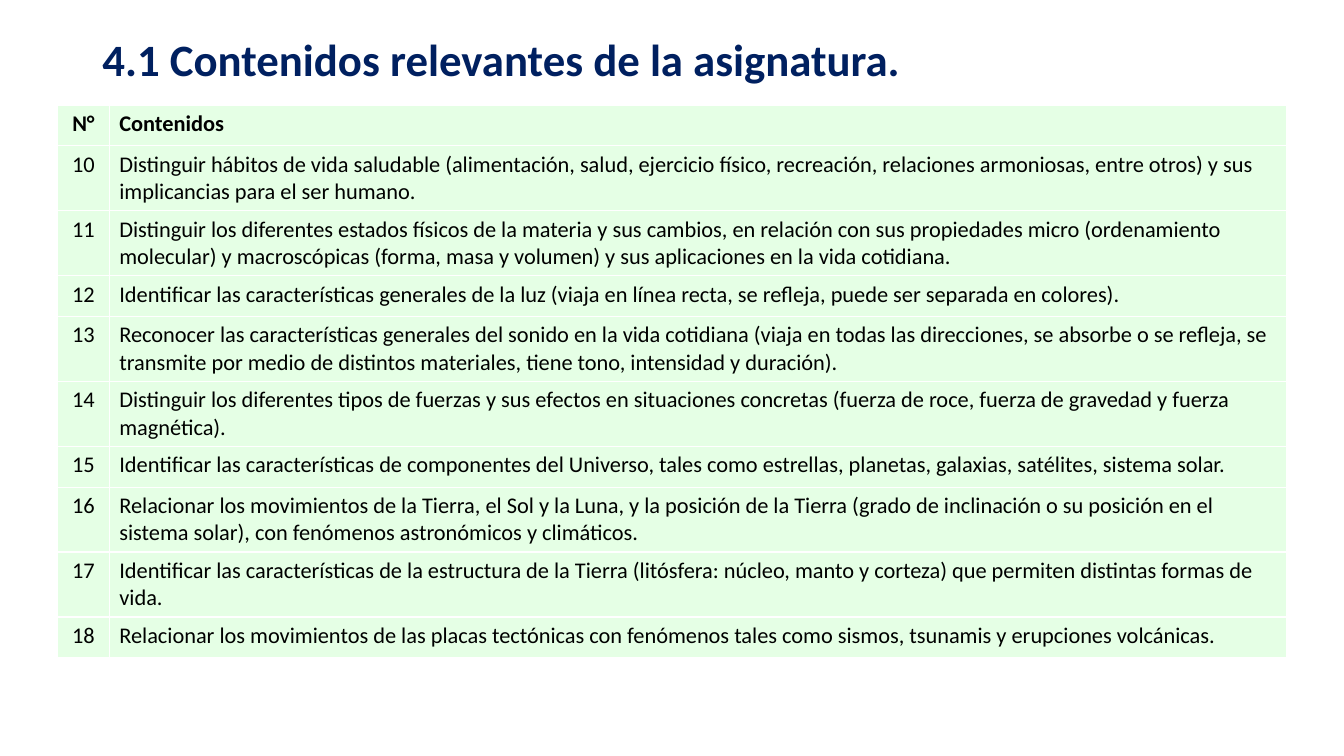
"""Build the slide listing contents 10 to 18 of the subject."""
from pptx import Presentation
from pptx.dml.color import RGBColor
from pptx.enum.text import MSO_ANCHOR, PP_ALIGN
from pptx.util import Pt

LEFT, CENTER, MIDDLE = PP_ALIGN.LEFT, PP_ALIGN.CENTER, MSO_ANCHOR.MIDDLE
NAVY = RGBColor(0x00, 0x20, 0x60)
BLACK = RGBColor(0x00, 0x00, 0x00)
PALE_GREEN = RGBColor(0xE5, 0xFF, 0xE5)
FONT = "Calibri"

HEADING = "4.1 Contenidos relevantes de la asignatura."
HEADER = ("N°", "Contenidos")
FIRST_NUMBER = 10
CONTENTS = [
    "Distinguir hábitos de vida saludable (alimentación, salud, ejercicio físico, recreación, relaciones armoniosas, entre otros) y sus implicancias para el ser humano.",
    "Distinguir los diferentes estados físicos de la materia y sus cambios, en relación con sus propiedades micro (ordenamiento molecular) y macroscópicas (forma, masa y volumen) y sus aplicaciones en la vida cotidiana.",
    "Identificar las características generales de la luz (viaja en línea recta, se refleja, puede ser separada en colores).",
    "Reconocer las características generales del sonido en la vida cotidiana (viaja en todas las direcciones, se absorbe o se refleja, se transmite por medio de distintos materiales, tiene tono, intensidad y duración).",
    "Distinguir los diferentes tipos de fuerzas y sus efectos en situaciones concretas (fuerza de roce, fuerza de gravedad y fuerza magnética).",
    "Identificar las características de componentes del Universo, tales como estrellas, planetas, galaxias, satélites, sistema solar.",
    "Relacionar los movimientos de la Tierra, el Sol y la Luna, y la posición de la Tierra (grado de inclinación o su posición en el sistema solar), con fenómenos astronómicos y climáticos.",
    "Identificar las características de la estructura de la Tierra (litósfera: núcleo, manto y corteza) que permiten distintas formas de vida.",
    "Relacionar los movimientos de las placas tectónicas con fenómenos tales como sismos, tsunamis y erupciones volcánicas.",
]
COLUMN_WIDTHS = (36.9, 840.9)
COLUMN_ALIGNMENTS = (CENTER, LEFT)
ROW_HEIGHT = 29.2


def style(paragraph, size, color, bold):
    paragraph.font.name = FONT
    paragraph.font.size = Pt(size)
    paragraph.font.color.rgb = color
    paragraph.font.bold = bold


def add_heading(slide):
    heading = slide.shapes.title
    heading.left, heading.top, heading.width, heading.height = Pt(66), Pt(18.6), Pt(828), Pt(52)
    heading.text_frame.text = HEADING
    heading.text_frame.vertical_anchor = MIDDLE
    line = heading.text_frame.paragraphs[0]
    line.alignment = LEFT
    line.line_spacing = 0.9
    style(line, 32, NAVY, True)


def add_contents(slide):
    rows = [HEADER] + [(str(n), text) for n, text in enumerate(CONTENTS, FIRST_NUMBER)]
    contents = slide.shapes.add_table(
        len(rows), len(HEADER), Pt(41.2), Pt(75),
        Pt(sum(COLUMN_WIDTHS)), Pt(ROW_HEIGHT * len(rows))).table
    contents.horz_banding = False
    for column, width in zip(contents.columns, COLUMN_WIDTHS):
        column.width = Pt(width)
    for r, row in enumerate(rows):
        for c, (text, alignment) in enumerate(zip(row, COLUMN_ALIGNMENTS)):
            cell = contents.cell(r, c)
            cell.text = text
            cell.fill.solid()
            cell.fill.fore_color.rgb = PALE_GREEN
            paragraph = cell.text_frame.paragraphs[0]
            paragraph.alignment = alignment
            style(paragraph, 16, BLACK, r == 0)


def main():
    deck = Presentation()
    deck.slide_width, deck.slide_height = Pt(960), Pt(540)
    slide = deck.slides.add_slide(deck.slide_layouts[5])
    add_heading(slide)
    add_contents(slide)
    deck.save("out.pptx")


if __name__ == "__main__":
    main()
